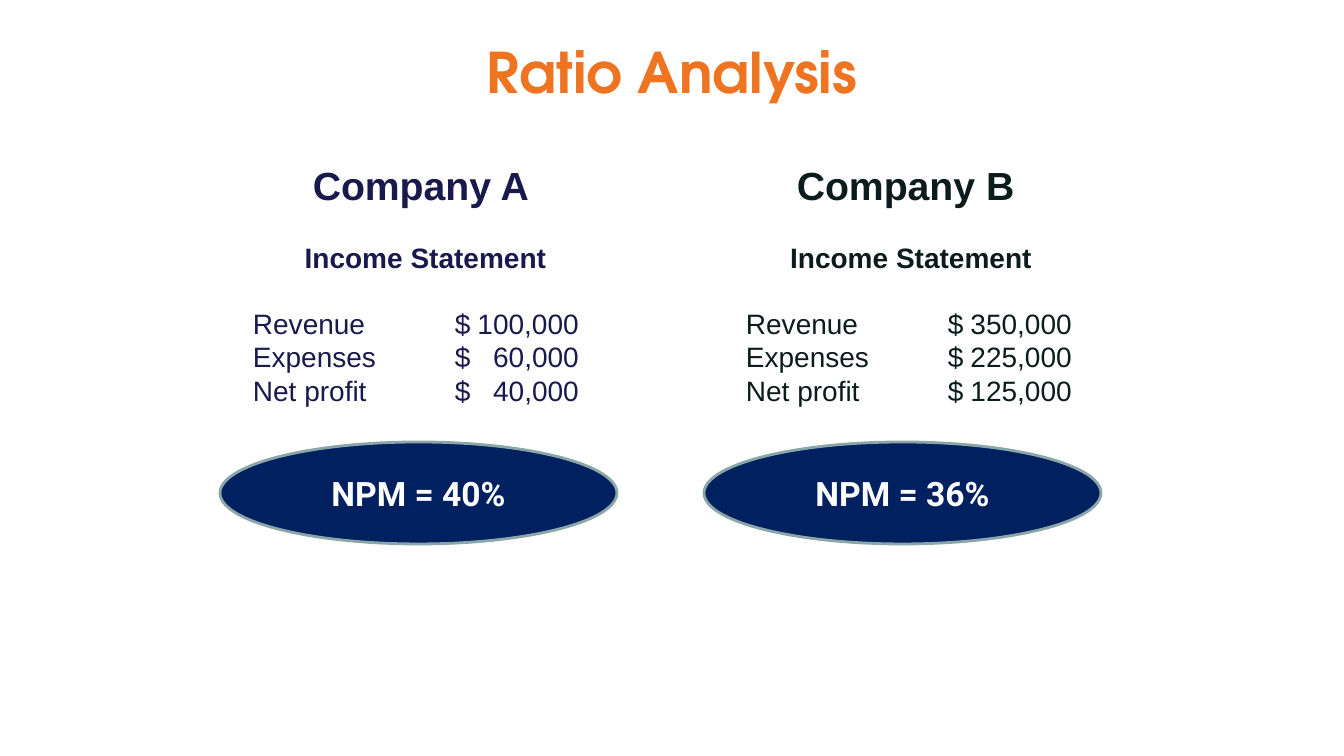
from dataclasses import dataclass

from lxml.etree import SubElement
from pptx import Presentation
from pptx.dml.color import RGBColor
from pptx.enum.shapes import MSO_SHAPE
from pptx.enum.text import MSO_ANCHOR, PP_ALIGN
from pptx.oxml.ns import qn
from pptx.util import Emu, Pt


@dataclass(frozen=True)
class Theme:
    title: str = "EE7421"
    company_a: str = "19194D"
    company_b: str = "0C1C1D"
    ratio_fill: str = "002060"
    ratio_line: str = "8AA6A8"
    ratio_text: str = "FFFFFF"
    title_font: str = "TeX Gyre Adventor"
    body_font: str = "Arial"
    ratio_font: str = "Roboto"
    title_size: int = 40
    company_size: int = 28
    body_size: int = 20
    ratio_size: int = 24
    section_gap: int = 23


def px(length):
    return Emu(round(length * 914400 / 100.8))


class RatioSlide:
    def __init__(self, deck, theme):
        self.theme = theme
        self.slide = deck.slides.add_slide(deck.slide_layouts[6])

    def style(self, paragraph, font_name, size, color, bold=True, align=PP_ALIGN.CENTER):
        paragraph.alignment = align
        for run in paragraph.runs:
            run.font.name = font_name
            run.font.size = Pt(size)
            run.font.bold = bold
            run.font.color.rgb = RGBColor.from_string(color)

    def tabs(self, paragraph, stops):
        tab_list = SubElement(paragraph._p.get_or_add_pPr(), qn("a:tabLst"))
        for position, align in stops:
            SubElement(tab_list, qn("a:tab"), pos=str(px(position)), algn=align)

    def title(self, wording, left, top, width, height):
        frame = self.slide.shapes.add_textbox(*map(px, (left, top, width, height))).text_frame
        frame.word_wrap = True
        frame.vertical_anchor = MSO_ANCHOR.MIDDLE
        frame.margin_left = frame.margin_right = frame.margin_top = frame.margin_bottom = 0
        frame.text = wording
        self.style(frame.paragraphs[0], self.theme.title_font, self.theme.title_size, self.theme.title)

    def statement(self, company, entries, color, left, top, width, height):
        theme = self.theme
        frame = self.slide.shapes.add_textbox(*map(px, (left, top, width, height))).text_frame
        frame.word_wrap = True
        lines = [f"{label}\t$\t{amount}" for label, amount in entries]
        frame.text = "\n".join([company, "Income Statement", *lines])
        heading, subheading, *rows = frame.paragraphs
        self.style(heading, theme.body_font, theme.company_size, color)
        self.style(subheading, theme.body_font, theme.body_size, color)
        for section_start in (subheading, rows[0]):
            section_start.space_before = Pt(theme.section_gap)
        for row in rows:
            self.tabs(row, [(202, "l"), (326, "r")])
            self.style(row, theme.body_font, theme.body_size, color, False, PP_ALIGN.LEFT)

    def ratio(self, wording, left, top, width, height):
        theme = self.theme
        oval = self.slide.shapes.add_shape(MSO_SHAPE.OVAL, *map(px, (left, top, width, height)))
        oval.shadow.inherit = False
        oval.fill.solid()
        oval.fill.fore_color.rgb = RGBColor.from_string(theme.ratio_fill)
        oval.line.color.rgb = RGBColor.from_string(theme.ratio_line)
        oval.line.width = Pt(2)
        oval.text_frame.vertical_anchor = MSO_ANCHOR.MIDDLE
        oval.text_frame.text = wording
        self.style(oval.text_frame.paragraphs[0], theme.ratio_font, theme.ratio_size, theme.ratio_text)


def main():
    deck = Presentation()
    deck.slide_width, deck.slide_height = px(1344), px(756)
    theme = Theme()
    page = RatioSlide(deck, theme)
    page.title("Ratio Analysis", 168, 0, 1008, 143)
    labels = ("Revenue", "Expenses", "Net profit")
    companies = [
        ("Company A ", ("100,000", "60,000", "40,000"), theme.company_a, 243, 365, "NPM = 40%", 220),
        ("Company B ", ("350,000", "225,000", "125,000"), theme.company_b, 736, 350, "NPM = 36%", 704),
    ]
    for company, amounts, color, left, width, margin, margin_left in companies:
        page.statement(company, list(zip(labels, amounts)), color, left, 156, width, 261)
        page.ratio(margin, margin_left, 442, 397, 102)
    deck.save("out.pptx")


if __name__ == "__main__":
    main()
